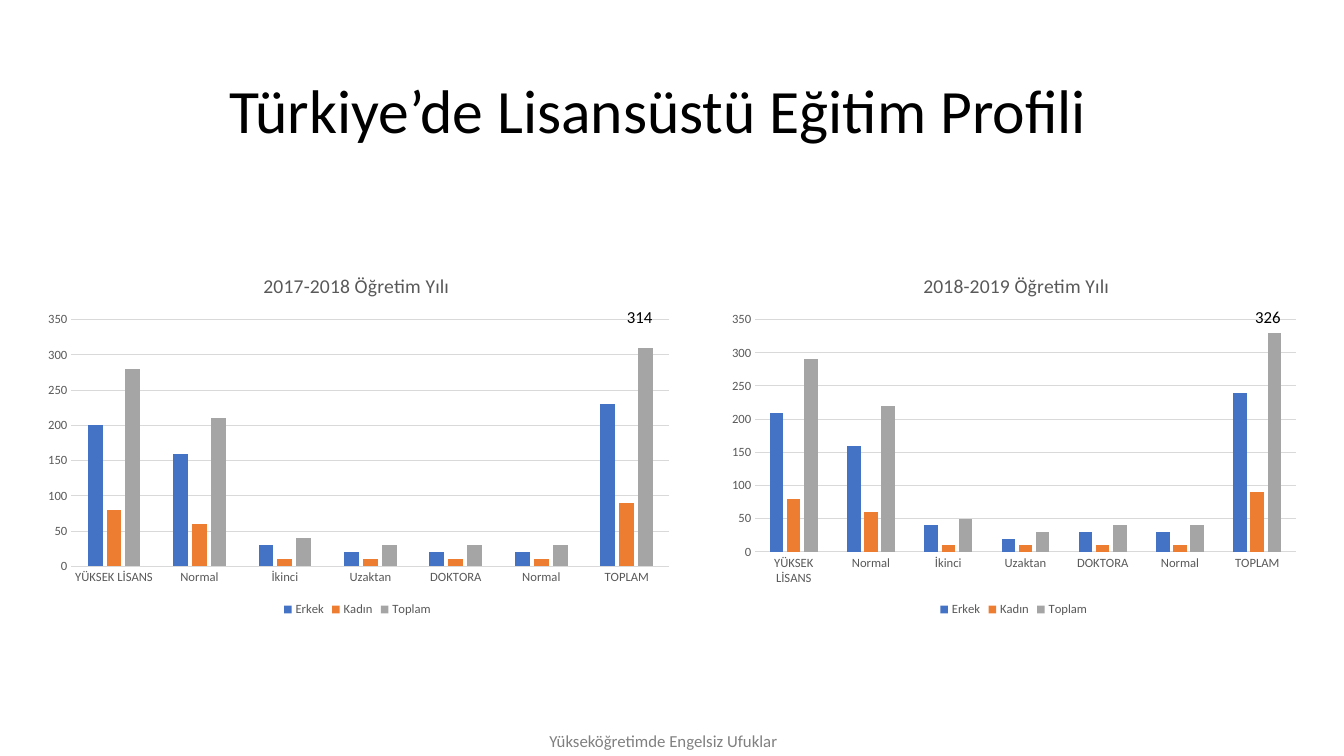
import pptx
import pptx.util
import pptx.chart.data
import pptx.dml.color
import pptx.enum.chart
import pptx.enum.text
import pptx.oxml
from pptx.util import Inches

RGBColor = pptx.dml.color.RGBColor
BLACK = RGBColor(0x00, 0x00, 0x00)
FOOTER_GRAY = RGBColor(0x80, 0x80, 0x80)
LABEL_GRAY = RGBColor(0x59, 0x59, 0x59)
GRID_GRAY = RGBColor(0xD9, 0xD9, 0xD9)
SERIES_COLORS = {
    "Erkek": RGBColor(0x44, 0x72, 0xC4),
    "Kadın": RGBColor(0xED, 0x7D, 0x31),
    "Toplam": RGBColor(0xA5, 0xA5, 0xA5),
}
FONT = "Calibri"
PROGRAMS = ["YÜKSEK LİSANS", "Normal", "İkinci", "Uzaktan", "DOKTORA",
            "Normal", "TOPLAM"]
CHART_TOP, CHART_HEIGHT = 2.56, 3.6

# Plot and title places are fractions of the chart area
YEARS = [
    {"title": "2017-2018 Öğretim Yılı", "left": 0.32, "width": 6.45,
     "plot": {"x": 0.06, "y": 0.17, "w": 0.92, "h": 0.68},
     "title_place": {"x": 0.35, "y": 0.03},
     "students": [[200, 160, 30, 20, 20, 20, 230],
                  [80, 60, 10, 10, 10, 10, 90],
                  [280, 210, 40, 30, 30, 30, 310]],
     "total": "314", "total_left": 6.12},
    {"title": "2018-2019 Öğretim Yılı", "left": 7.14, "width": 5.83,
     "plot": {"x": 0.06, "y": 0.17, "w": 0.92, "h": 0.64},
     "title_place": {"x": 0.34, "y": 0.03},
     "students": [[210, 160, 40, 20, 30, 30, 240],
                  [80, 60, 10, 10, 10, 10, 90],
                  [290, 220, 50, 30, 40, 40, 330]],
     "total": "326", "total_left": 12.35},
]


def style_font(font, size, color):
    font.name = FONT
    font.size = pptx.util.Pt(size)
    font.bold = False
    font.color.rgb = color


def style_line(line, color):
    line.color.rgb = color
    line.width = pptx.util.Pt(0.75)


def make_layout(place, inner=False):
    target = '<c:layoutTarget val="inner"/>' if inner else ""
    modes = "".join(f'<c:{key}Mode val="edge"/>' for key in "xy")
    sizes = "".join(f'<c:{key} val="{value}"/>' for key, value in place.items())
    return pptx.oxml.parse_xml(
        '<c:layout xmlns:c="http://schemas.openxmlformats.org/drawingml/2006/chart">'
        f"<c:manualLayout>{target}{modes}{sizes}</c:manualLayout></c:layout>")


def set_layout(parent, layout, index):
    for old_layout in parent.xpath("c:layout"):
        parent.remove(old_layout)
    parent.insert(index, layout)


def add_heading(slide, text):
    heading = slide.shapes.title
    heading.left, heading.top = Inches(0.92), Inches(0.4)
    heading.width, heading.height = Inches(11.5), Inches(1.45)
    frame = heading.text_frame
    frame.text = text
    frame.word_wrap = True
    frame.vertical_anchor = pptx.enum.text.MSO_ANCHOR.MIDDLE
    frame.margin_right = Inches(0.38)
    paragraph = frame.paragraphs[0]
    paragraph.alignment = pptx.enum.text.PP_ALIGN.CENTER
    paragraph.line_spacing = 0.9
    style_font(paragraph.runs[0].font, 44, BLACK)


def add_label(slide, text, left, top, width, color, wrap=True):
    label = slide.shapes.add_textbox(Inches(left), Inches(top),
                                     Inches(width), Inches(0.3))
    label.text_frame.text = text
    label.text_frame.word_wrap = wrap
    style_font(label.text_frame.paragraphs[0].runs[0].font, 12, color)


def style_axes(chart):
    for axis in (chart.category_axis, chart.value_axis):
        axis.major_tick_mark = pptx.enum.chart.XL_TICK_MARK.NONE
        axis.minor_tick_mark = pptx.enum.chart.XL_TICK_MARK.NONE
        style_font(axis.tick_labels.font, 9, LABEL_GRAY)
    style_line(chart.category_axis.format.line, GRID_GRAY)
    students_axis = chart.value_axis
    students_axis.minimum_scale = 0
    students_axis.maximum_scale = 350
    students_axis.major_unit = 50
    students_axis.format.line.fill.background()
    style_line(students_axis.major_gridlines.format.line, GRID_GRAY)


def add_year_chart(slide, year):
    data = pptx.chart.data.CategoryChartData(number_format="General")
    data.categories = PROGRAMS
    for name, values in zip(SERIES_COLORS, year["students"]):
        data.add_series(name, values)
    chart = slide.shapes.add_chart(
        pptx.enum.chart.XL_CHART_TYPE.COLUMN_CLUSTERED,
        Inches(year["left"]), Inches(CHART_TOP),
        Inches(year["width"]), Inches(CHART_HEIGHT), data).chart
    style_font(chart.font, 10, BLACK)

    # Title
    chart.has_title = True
    title_frame = chart.chart_title.text_frame
    title_frame.text = year["title"]
    style_font(title_frame.paragraphs[0].runs[0].font, 14, LABEL_GRAY)
    chart.chart_title.include_in_layout = False
    set_layout(chart.chart_title._element, make_layout(year["title_place"]), 1)

    # Columns
    plot = chart.plots[0]
    plot.vary_by_categories = False
    plot.gap_width = 219
    plot.overlap = -27
    for series in plot.series:
        series.format.fill.solid()
        series.format.fill.fore_color.rgb = SERIES_COLORS[series.name]
        series.invert_if_negative = False
    style_axes(chart)
    plot_area = chart._chartSpace.chart.plotArea
    set_layout(plot_area, make_layout(year["plot"], inner=True), 0)

    # Legend
    chart.has_legend = True
    chart.legend.position = pptx.enum.chart.XL_LEGEND_POSITION.BOTTOM
    chart.legend.include_in_layout = False
    style_font(chart.legend.font, 9, LABEL_GRAY)


def main():
    deck = pptx.Presentation()
    deck.slide_width, deck.slide_height = Inches(13.33), Inches(7.5)
    slide = deck.slides.add_slide(deck.slide_layouts[5])

    add_heading(slide, "Türkiye’de Lisansüstü Eğitim Profili")

    # One chart per year, with its grand total above the last column
    for year in YEARS:
        add_year_chart(slide, year)
    for year in YEARS:
        add_label(slide, year["total"], year["total_left"], 2.99, 0.62, BLACK)

    # Footer
    add_label(slide, "Yükseköğretimde Engelsiz Ufuklar", 5.35, 7.2, 2.63,
              FOOTER_GRAY, wrap=False)

    deck.save("out.pptx")


if __name__ == "__main__":
    main()
